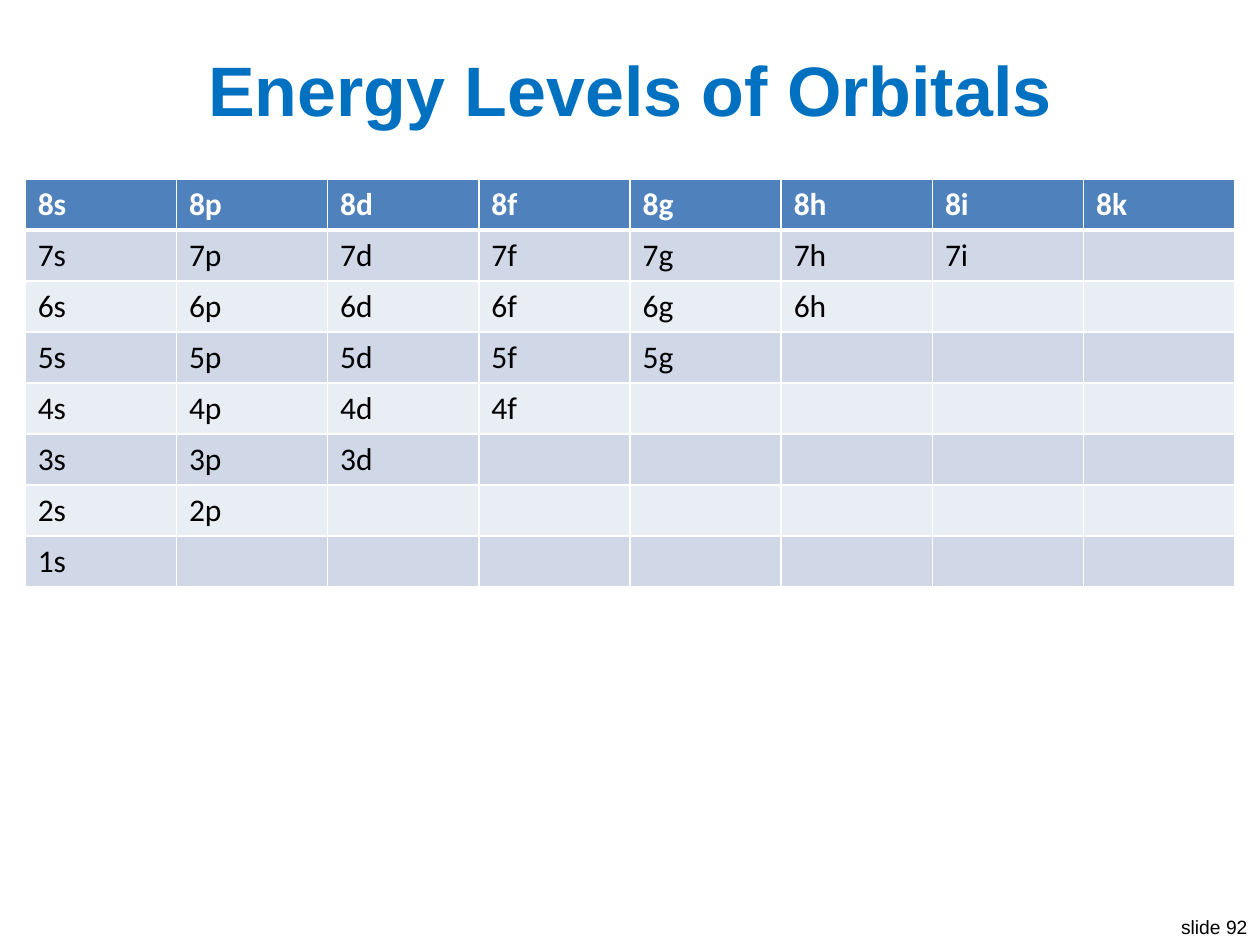
"""Build the slide that tabulates the energy levels of orbitals."""
from lxml.etree import SubElement
from pptx import Presentation
from pptx.dml.color import RGBColor
from pptx.enum.text import MSO_ANCHOR, PP_ALIGN
from pptx.oxml.ns import qn
from pptx.util import Inches, Pt

TITLE = "Energy Levels of Orbitals"
FOOTER = "slide 92"
SUBSHELLS = "spdfghik"
SHELLS = range(len(SUBSHELLS), 0, -1)
ORBITALS = [[f"{shell}{letter}" for letter in SUBSHELLS[:shell]] for shell in SHELLS]

WIDTH, HEIGHT = 10, 7.5
MARGIN = 0.02 * WIDTH
CONTENT_WIDTH = WIDTH - 2 * MARGIN
TABLE_TOP, TABLE_HEIGHT = 1.42, 3.24

BLUE = RGBColor(0x00, 0x70, 0xC0)
HEADER_BLUE = RGBColor(0x4F, 0x81, 0xBD)
BANDS = [RGBColor(0xE9, 0xED, 0xF4), RGBColor(0xD0, 0xD8, 0xE8)]
WHITE = RGBColor(0xFF, 0xFF, 0xFF)
BLACK = RGBColor(0x00, 0x00, 0x00)

TITLE_FONT = {"name": "Arial", "size": Pt(40), "bold": True}
FOOTER_FONT = {"name": "Arial", "size": Pt(11), "bold": False}
HEADER_FONT = {"name": "Calibri", "size": Pt(18), "bold": True}
BODY_FONT = {**HEADER_FONT, "bold": False}


def write(paragraph, text, font_values, color):
    run = paragraph.add_run()
    run.text = text
    for name, value in font_values.items():
        setattr(run.font, name, value)
    run.font.color.rgb = color


def add_text(slide, box, text, font_values, color, alignment, wrap):
    frame = slide.shapes.add_textbox(*map(Inches, box)).text_frame
    frame.word_wrap = wrap
    frame.vertical_anchor = MSO_ANCHOR.MIDDLE
    frame.paragraphs[0].alignment = alignment
    write(frame.paragraphs[0], text, font_values, color)


def set_borders(cell, points_by_side):
    properties = cell._tc.get_or_add_tcPr()
    for side, points in points_by_side.items():
        line = SubElement(properties, qn(f"a:ln{side}"), w=str(Pt(points)))
        fill = SubElement(line, qn("a:solidFill"))
        SubElement(fill, qn("a:srgbClr"), val=str(WHITE))


def add_orbital_table(slide):
    count = len(SUBSHELLS)
    box = (MARGIN, TABLE_TOP, CONTENT_WIDTH, TABLE_HEIGHT)
    table = slide.shapes.add_table(len(ORBITALS), count, *map(Inches, box)).table
    for row, orbitals in enumerate(ORBITALS):
        header = row == 0
        borders = {"L": 1, "R": 1, "T": 3 if row == 1 else 1, "B": 3 if header else 1}
        for column in range(count):
            cell = table.cell(row, column)
            set_borders(cell, borders)
            cell.fill.solid()
            cell.fill.fore_color.rgb = HEADER_BLUE if header else BANDS[row % 2]
            if column < len(orbitals):
                write(cell.text_frame.paragraphs[0], orbitals[column],
                      HEADER_FONT if header else BODY_FONT, WHITE if header else BLACK)


def main():
    presentation = Presentation()
    presentation.slide_width, presentation.slide_height = Inches(WIDTH), Inches(HEIGHT)
    slide = presentation.slides.add_slide(presentation.slide_layouts[6])
    add_text(slide, (WIDTH - 0.75, HEIGHT - 0.29, 0.75, 0.29), FOOTER,
             FOOTER_FONT, BLACK, PP_ALIGN.RIGHT, False)
    add_text(slide, (MARGIN, 0.3, CONTENT_WIDTH, 0.8), TITLE,
             TITLE_FONT, BLUE, PP_ALIGN.CENTER, True)
    add_orbital_table(slide)
    presentation.save("out.pptx")


if __name__ == "__main__":
    main()
